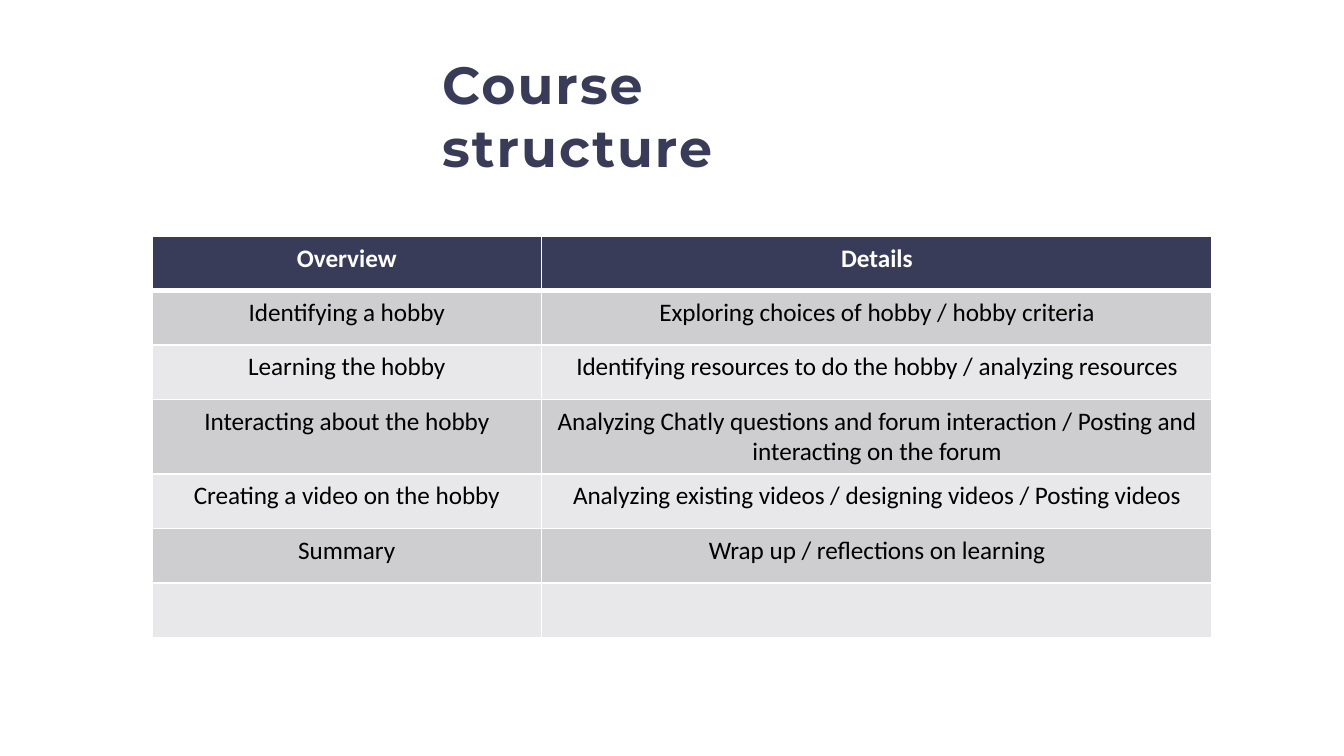
"""Build a course structure slide with a title and a two-column table."""
from lxml import etree
from pptx import Presentation
from pptx.dml.color import RGBColor
from pptx.enum.text import MSO_ANCHOR, MSO_AUTO_SIZE, PP_ALIGN
from pptx.oxml.ns import qn
from pptx.util import Inches, Pt

CENTER, LEFT = PP_ALIGN.CENTER, PP_ALIGN.LEFT
TOP = MSO_ANCHOR.TOP
NO_AUTOFIT = MSO_AUTO_SIZE.NONE

TITLE = "Course structure"
ROWS = [
    ("Overview", "Details"),
    ("Identifying a hobby", "Exploring choices of hobby / hobby criteria"),
    ("Learning the hobby", "Identifying resources to do the hobby / analyzing resources"),
    ("Interacting about the hobby",
     "Analyzing Chatly questions and forum interaction / Posting and interacting on the forum"),
    ("Creating a video on the hobby",
     "Analyzing existing videos / designing videos / Posting videos"),
    ("Summary", "Wrap up / reflections on learning"),
    ("", ""),
]
COLORS = {"navy": "383C58", "dark band": "CECED1", "light band": "E8E8EA",
          "white": "FFFFFF", "black": "000000"}
SLIDE_WIDTH = 10
SLIDE_HEIGHT = SLIDE_WIDTH * 9 / 16
COLUMN_WIDTHS = (2.9, 4.99)
TABLE_HEIGHT = 2.83


def color(name):
    return RGBColor.from_string(COLORS[name])


def format_font(font, name, size, color_name, bold):
    font.name, font.size, font.bold = name, Pt(size), bold
    font.color.rgb = color(color_name)


def add_borders(cell, widths):
    properties = cell._tc.get_or_add_tcPr()
    for side, width in widths.items():
        line = etree.SubElement(properties, qn(f"a:ln{side}"), w=str(Pt(width)))
        fill = etree.SubElement(line, qn("a:solidFill"))
        etree.SubElement(fill, qn("a:srgbClr"), val=COLORS["white"])


def add_title(slide):
    title = slide.shapes.title
    title.left, title.top = Inches(3.19), Inches(0.34)
    title.width, title.height = Inches(3.15), Inches(0.57)
    frame = title.text_frame
    frame.text = TITLE
    frame.word_wrap = True
    frame.auto_size = NO_AUTOFIT
    frame.vertical_anchor = TOP
    paragraph = frame.paragraphs[0]
    paragraph.alignment = LEFT
    run = paragraph.runs[0]
    format_font(run.font, "Montserrat", 28, "navy", True)
    run._r.get_or_add_rPr().set("spc", "110")


def add_course_table(slide):
    table = slide.shapes.add_table(
        len(ROWS), len(COLUMN_WIDTHS), Inches(1.13), Inches(1.76),
        Inches(sum(COLUMN_WIDTHS)), Inches(TABLE_HEIGHT)).table
    for column, width in zip(table.columns, COLUMN_WIDTHS):
        column.width = Inches(width)
    for row_index, texts in enumerate(ROWS):
        header = row_index == 0
        band = "navy" if header else ("light band", "dark band")[row_index % 2]
        for column_index, text in enumerate(texts):
            cell = table.cell(row_index, column_index)
            add_borders(cell, {"L": 1, "R": 1, "T": 3 if row_index == 1 else 1,
                               "B": 3 if header else 1})
            cell.fill.solid()
            cell.fill.fore_color.rgb = color(band)
            cell.text_frame.text = text
            paragraph = cell.text_frame.paragraphs[0]
            paragraph.alignment = CENTER
            for run in paragraph.runs:
                format_font(run.font, "Calibri", 13.5,
                            "white" if header else "black", header)


def main():
    presentation = Presentation()
    presentation.slide_width = Inches(SLIDE_WIDTH)
    presentation.slide_height = Inches(SLIDE_HEIGHT)
    slide = presentation.slides.add_slide(presentation.slide_layouts[5])
    add_title(slide)
    add_course_table(slide)
    presentation.save("out.pptx")


if __name__ == "__main__":
    main()
